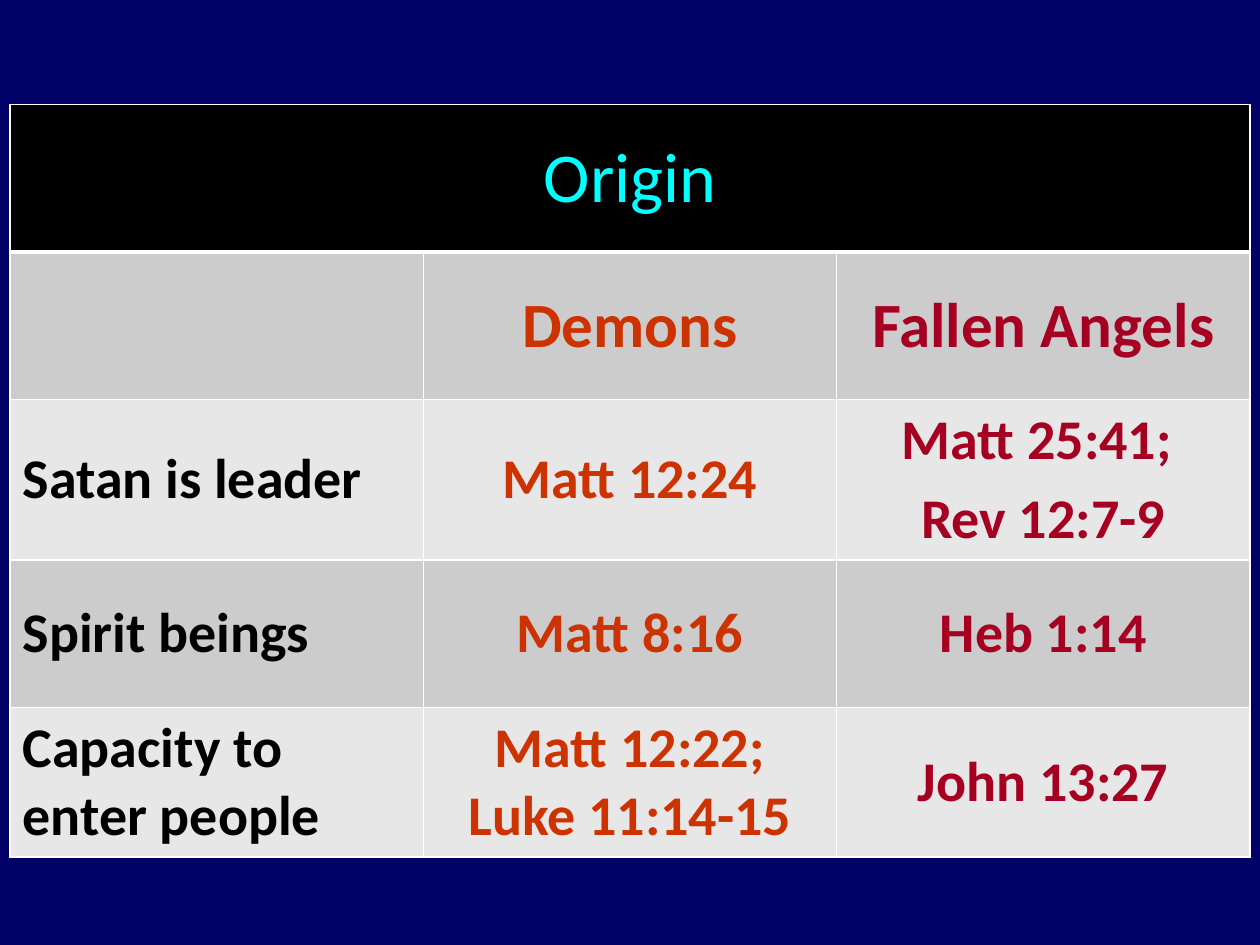
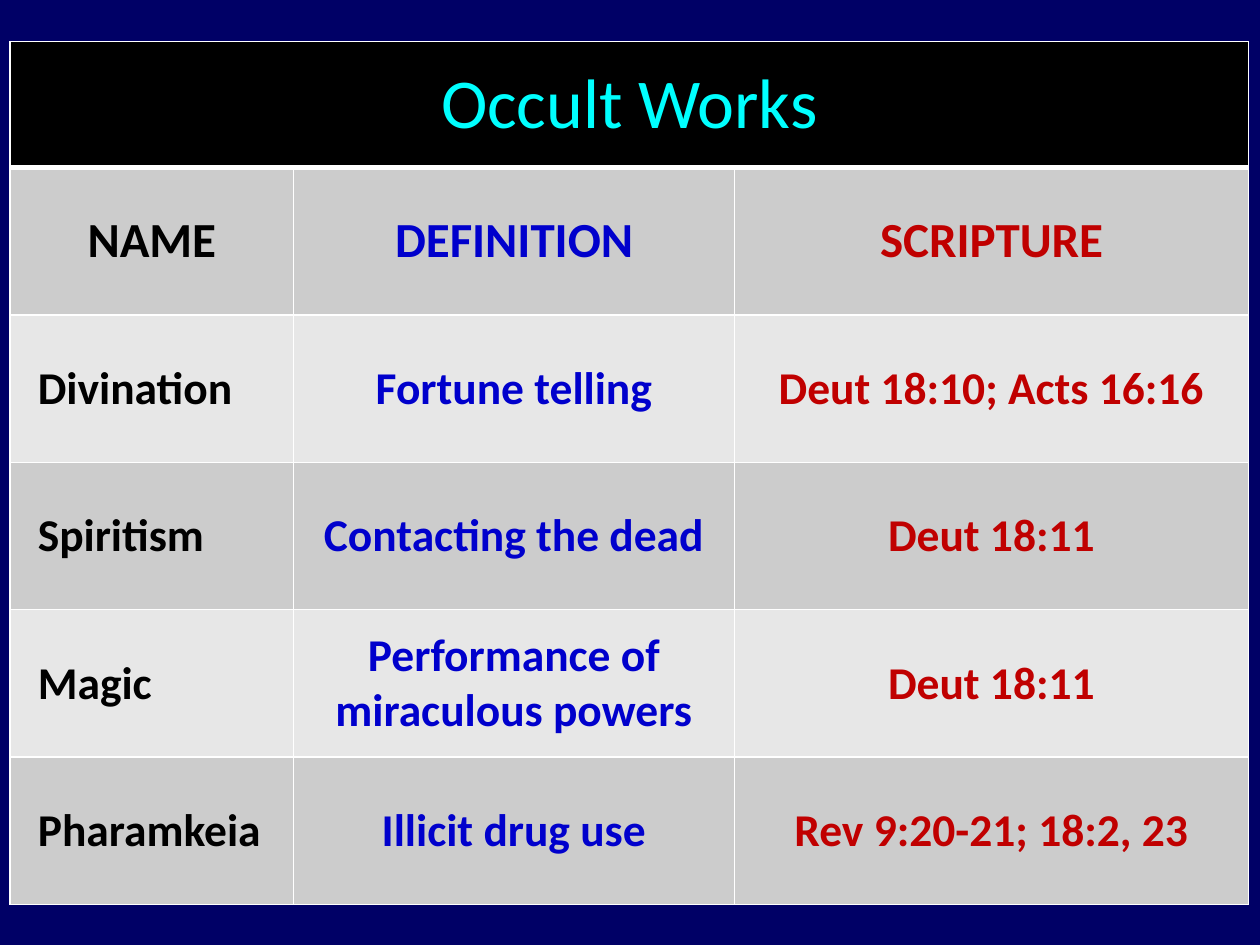
from dataclasses import dataclass

import lxml.etree
import pptx
import pptx.dml.color
import pptx.enum.text
import pptx.oxml.ns
import pptx.util

BACKGROUND = "000066"
TITLE_FILL = "000000"
TITLE_COLOR = "00FFFF"
BORDER_COLOR = "FFFFFF"
BAND_FILLS = ("CCCCCC", "E7E7E7")
FONT = "Calibri"
TITLE_SIZE = 40
TABLE_LEFT = 0.08
ROW_HEIGHT = 1.17
THIN, THICK = 1, 3
CENTER = pptx.enum.text.PP_ALIGN.CENTER
LEFT = pptx.enum.text.PP_ALIGN.LEFT


@dataclass(frozen=True)
class TextStyle:
    size: int
    color: str
    bold: bool = True
    align: pptx.enum.text.PP_ALIGN = CENTER
    indent: float = 0


@dataclass(frozen=True)
class TableSlide:
    title: str
    top: float
    title_height: float
    column_widths: tuple[float, ...]
    column_colors: tuple[str, ...]
    header_size: int
    body_size: int
    label_indent: float
    rows: tuple[tuple[str, ...], ...]


TABLE_SLIDES = (
    TableSlide(
        title="Origin", top=0.83, title_height=ROW_HEIGHT,
        column_widths=(3.28, 3.28, 3.28),
        column_colors=("000000", "CC3300", "A50021"),
        header_size=36, body_size=32, label_indent=0,
        rows=(
            ("", "Demons", "Fallen Angels"),
            ("Satan is leader", "Matt 12:24", "Matt 25:41; \nRev 12:7-9"),
            ("Spirit beings", "Matt 8:16", "Heb 1:14"),
            ("Capacity to enter people", "Matt 12:22; Luke 11:14-15", "John 13:27"),
        ),
    ),
    TableSlide(
        title="Occult Works", top=0.33, title_height=1,
        column_widths=(2.25, 3.5, 4.08),
        column_colors=("000000", "0000CC", "C00000"),
        header_size=28, body_size=26, label_indent=0.12,
        rows=(
            ("NAME", "DEFINITION", "SCRIPTURE"),
            ("Divination", "Fortune telling", "Deut 18:10; Acts 16:16"),
            ("Spiritism", "Contacting the dead", "Deut 18:11"),
            ("Magic", "Performance of miraculous powers", "Deut 18:11"),
            ("Pharamkeia", "Illicit drug use", "Rev 9:20-21; 18:2, 23"),
        ),
    ),
)


def rgb(color: str) -> pptx.dml.color.RGBColor:
    return pptx.dml.color.RGBColor.from_string(color)


def add_child(parent, tag: str, **attributes: str):
    child = lxml.etree.SubElement(parent, pptx.oxml.ns.qn(tag))
    for name, value in attributes.items():
        child.set(name, value)
    return child


def format_cell(cell, fill: str, top: int = THIN, bottom: int = THIN) -> None:
    """Give a cell its borders, fill and vertical centring."""
    properties = cell._tc.get_or_add_tcPr()
    for tag, width in (("a:lnL", THIN), ("a:lnR", THIN), ("a:lnT", top), ("a:lnB", bottom)):
        line = add_child(properties, tag, w=str(pptx.util.Pt(width)))
        add_child(add_child(line, "a:solidFill"), "a:srgbClr", val=BORDER_COLOR)
    cell.fill.solid()
    cell.fill.fore_color.rgb = rgb(fill)
    cell.vertical_anchor = pptx.enum.text.MSO_ANCHOR.MIDDLE


def write_cell(cell, text: str, style: TextStyle) -> None:
    cell.text_frame.text = text
    for paragraph in cell.text_frame.paragraphs:
        paragraph.alignment = style.align
        properties = paragraph._p.get_or_add_pPr()
        properties.set("marL", str(pptx.util.Inches(style.indent)))
        add_child(add_child(properties, "a:spcBef"), "a:spcPct", val="20000")
        for run in paragraph.runs:
            run.font.name = FONT
            run.font.size = pptx.util.Pt(style.size)
            run.font.bold = style.bold
            run.font.color.rgb = rgb(style.color)


def body_style(content: TableSlide, row: int, column: int) -> TextStyle:
    color = content.column_colors[column]
    if row == 0:
        return TextStyle(content.header_size, color)
    if column == 0:
        return TextStyle(content.body_size, color, align=LEFT, indent=content.label_indent)
    return TextStyle(content.body_size, color)


def add_table_slide(presentation, content: TableSlide) -> None:
    slide = presentation.slides.add_slide(presentation.slide_layouts[6])
    slide.background.fill.solid()
    slide.background.fill.fore_color.rgb = rgb(BACKGROUND)

    heights = [content.title_height] + [ROW_HEIGHT] * len(content.rows)
    table = slide.shapes.add_table(
        len(heights), len(content.column_widths),
        pptx.util.Inches(TABLE_LEFT), pptx.util.Inches(content.top),
        pptx.util.Inches(sum(content.column_widths)), pptx.util.Inches(sum(heights)),
    ).table
    table.first_row = False
    table.horz_banding = False
    for column, width in zip(table.columns, content.column_widths):
        column.width = pptx.util.Inches(width)
    for row, height in zip(table.rows, heights):
        row.height = pptx.util.Inches(height)

    for cell in table.rows[0].cells:
        format_cell(cell, TITLE_FILL, bottom=THICK)
    table.cell(0, 0).merge(table.cell(0, len(content.column_widths) - 1))
    write_cell(table.cell(0, 0), content.title, TextStyle(TITLE_SIZE, TITLE_COLOR, bold=False))

    for row, texts in enumerate(content.rows):
        for column, text in enumerate(texts):
            cell = table.cell(row + 1, column)
            format_cell(cell, BAND_FILLS[row % 2], top=THICK if row == 0 else THIN)
            write_cell(cell, text, body_style(content, row, column))


def main() -> None:
    presentation = pptx.Presentation()
    presentation.slide_width = pptx.util.Inches(10)
    presentation.slide_height = pptx.util.Inches(7.5)
    for content in TABLE_SLIDES:
        add_table_slide(presentation, content)
    presentation.save("out.pptx")


if __name__ == "__main__":
    main()
